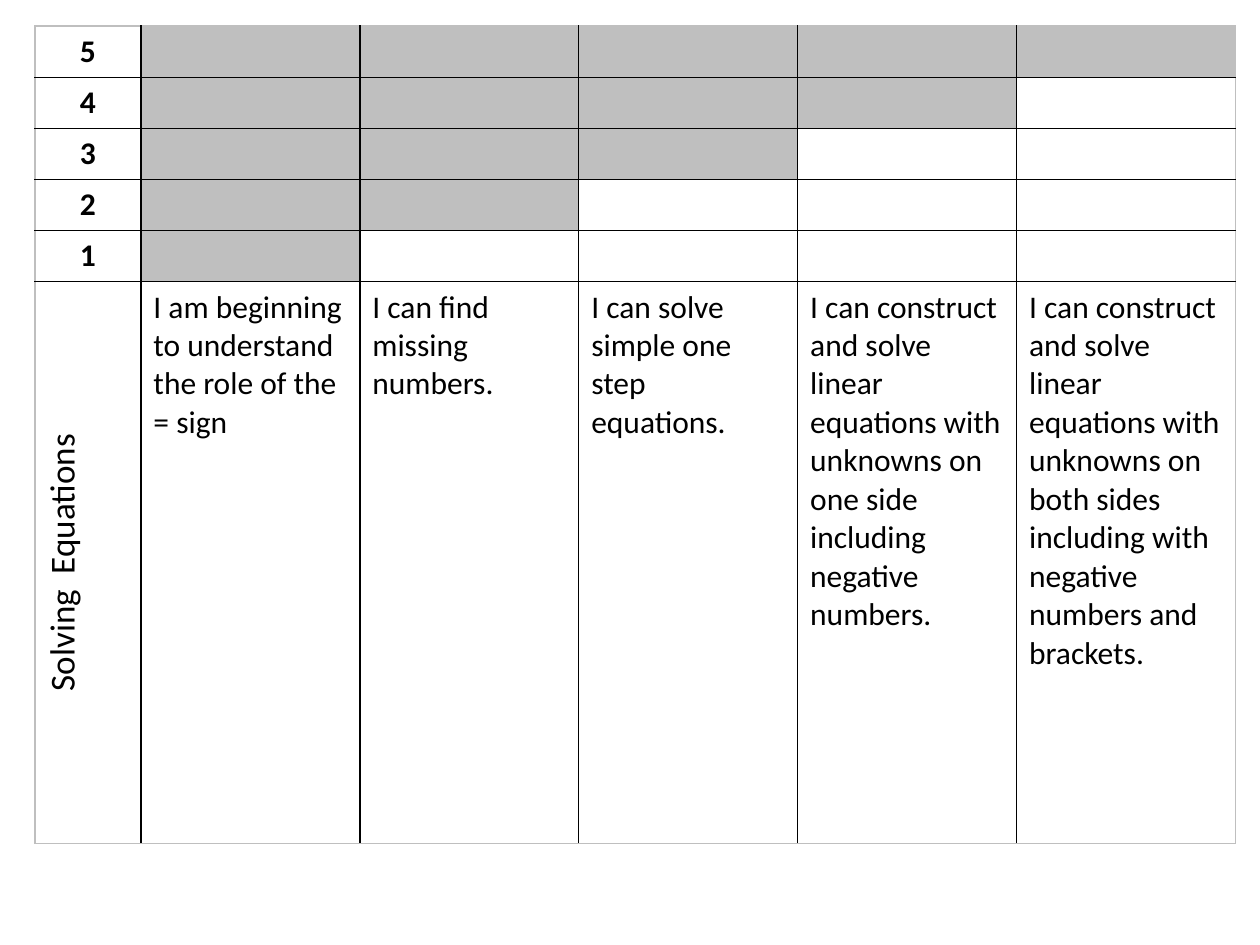
from lxml.etree import SubElement
from pptx import Presentation
from pptx.dml.color import RGBColor
from pptx.enum.text import PP_ALIGN
from pptx.oxml.ns import qn
from pptx.util import Pt

BLACK = RGBColor(0x00, 0x00, 0x00)
GREY = RGBColor(0xBF, 0xBF, 0xBF)

LEVELS = ["5", "4", "3", "2", "1"]
TOPIC = "Solving  Equations"
GOALS = [
    "I am beginning to understand the role of the = sign",
    "I can find missing numbers.",
    "I can solve simple one step equations.",
    "I can construct and solve linear equations with unknowns on one side "
    "including negative numbers.",
    "I can construct and solve linear equations with unknowns on both sides "
    "including with negative numbers and brackets.",
]

LEFT, TOP = 20, 15
HEAD_W, GOAL_W = 60.5, 125.1
LEVEL_H, GOAL_H = 28.75, 321


def add_edge(cell, side, color):
    line = SubElement(cell._tc.get_or_add_tcPr(), qn(f"a:ln{side}"), w=str(Pt(1)))
    fill = SubElement(line, qn("a:solidFill"))
    SubElement(fill, qn("a:srgbClr"), val=str(color))


def set_text(cell, text, size=18, bold=False, align=PP_ALIGN.LEFT):
    cell.text_frame.text = text
    para = cell.text_frame.paragraphs[0]
    para.alignment = align
    para.font.size = Pt(size)
    for run in para.runs:
        run.font.name = "Calibri"
        run.font.size = Pt(size)
        run.font.bold = bold
        run.font.color.rgb = BLACK


def main():
    deck = Presentation()
    deck.slide_width, deck.slide_height = Pt(720), Pt(540)
    slide = deck.slides.add_slide(deck.slide_layouts[6])

    widths = [HEAD_W] + [GOAL_W] * len(GOALS)
    heights = [LEVEL_H] * len(LEVELS) + [GOAL_H]
    rows, cols = len(heights), len(widths)
    table = slide.shapes.add_table(
        rows, cols, Pt(LEFT), Pt(TOP), Pt(sum(widths)), Pt(sum(heights))
    ).table
    table.first_row = table.horz_banding = False
    for col, width in zip(table.columns, widths):
        col.width = Pt(width)
    for row, height in zip(table.rows, heights):
        row.height = Pt(height)

    texts = [[level] + [""] * len(GOALS) for level in LEVELS] + [[TOPIC] + GOALS]
    for r, line in enumerate(texts):
        for c, text in enumerate(line):
            cell = table.cell(r, c)
            outer = {"L": c == 0, "R": c == cols - 1, "T": r == 0, "B": r == rows - 1}
            for side, rim in outer.items():
                add_edge(cell, side, GREY if rim else BLACK)
            if c > 0 and r + c < rows:
                cell.fill.solid()
                cell.fill.fore_color.rgb = GREY
            else:
                cell.fill.background()
            head, level = c == 0, r < len(LEVELS)
            set_text(
                cell, text,
                size=20 if head and not level else 18,
                bold=head and level,
                align=PP_ALIGN.CENTER if head else PP_ALIGN.LEFT,
            )
    table.cell(rows - 1, 0)._tc.get_or_add_tcPr().set("vert", "vert270")
    deck.save("out.pptx")


if __name__ == "__main__":
    main()
